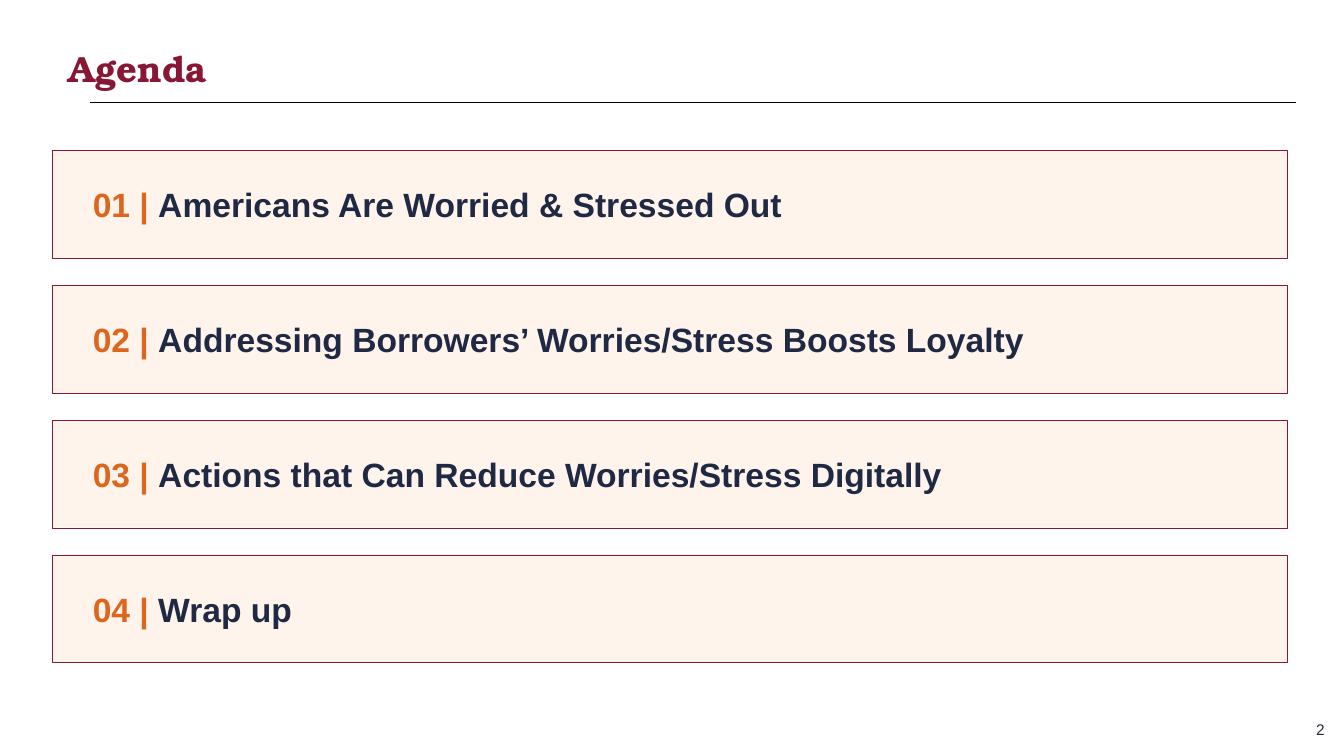
from lxml.etree import SubElement
from pptx import Presentation
from pptx.dml.color import RGBColor
from pptx.enum.shapes import MSO_CONNECTOR as Connector, MSO_SHAPE as Shape
from pptx.enum.text import MSO_ANCHOR as Anchor, PP_ALIGN as Align
from pptx.oxml.ns import qn
from pptx.util import Cm, Pt

TITLE = "Agenda"
TOPICS = [
    "Americans Are Worried & Stressed Out",
    "Addressing Borrowers’ Worries/Stress Boosts Loyalty",
    "Actions that Can Reduce Worries/Stress Digitally",
    "Wrap up",
]
PAGE_NUMBER = "2"

MAROON, ORANGE, NAVY = "881635", "DC661D", "202944"
CREAM, BLACK, CHARCOAL = "FEF0E5", "000000", "292934"
CREAM_OPACITY = 70

BAR_LEFT, BAR_TOP, BAR_WIDTH, BAR_HEIGHT = 1.32, 3.78, 31.12, 2.72
BAR_PITCH = 3.4
RULE_LEFT, RULE_RIGHT, RULE_TOP = 2.27, 32.67, 2.57


def color(target, value):
    target.rgb = RGBColor.from_string(value)


def write(paragraph, parts, font, size, bold):
    for text, value in parts:
        run = paragraph.add_run()
        run.text = text
        run.font.name, run.font.size, run.font.bold = font, Pt(size), bold
        color(run.font.color, value)


def add_label(slide, box, text, font, size, value, bold, wrap):
    frame = slide.shapes.add_textbox(*map(Cm, box)).text_frame
    frame.word_wrap = wrap
    frame.vertical_anchor = Anchor.MIDDLE if wrap else Anchor.TOP
    write(frame.paragraphs[0], [(text, value)], font, size, bold)


def add_topic(slide, index, topic):
    top = BAR_TOP + index * BAR_PITCH
    bar = slide.shapes.add_shape(
        Shape.RECTANGLE, Cm(BAR_LEFT), Cm(top), Cm(BAR_WIDTH), Cm(BAR_HEIGHT))
    bar.shadow.inherit = False
    bar.fill.solid()
    color(bar.fill.fore_color, CREAM)
    cream = bar._element.spPr.find(qn("a:solidFill")).find(qn("a:srgbClr"))
    SubElement(cream, qn("a:alpha"), val=str(CREAM_OPACITY * 1000))
    color(bar.line.color, MAROON)
    bar.line.width = Pt(0.25)
    frame = bar.text_frame
    frame.word_wrap = True
    frame.vertical_anchor = Anchor.MIDDLE
    frame.margin_left = Cm(1.02)
    paragraph = frame.paragraphs[0]
    paragraph.alignment = Align.LEFT
    parts = [(f"{index + 1:02} | ", ORANGE), (topic, NAVY)]
    write(paragraph, parts, "Arial", 24, True)


def add_rule(slide):
    rule = slide.shapes.add_connector(
        Connector.STRAIGHT, Cm(RULE_LEFT), Cm(RULE_TOP), Cm(RULE_RIGHT), Cm(RULE_TOP))
    color(rule.line.color, BLACK)
    rule.line.width = Pt(0.5)
    SubElement(rule._element.spPr, qn("a:effectLst"))


def main():
    """Build the agenda slide."""
    deck = Presentation()
    deck.slide_width, deck.slide_height = Cm(33.87), Cm(19.05)
    slide = deck.slides.add_slide(deck.slide_layouts[6])
    add_label(slide, (1.47, 1.04, 25.12, 1.37), TITLE, "TeX Gyre Bonum", 26, MAROON, True, True)
    add_rule(slide)
    for index, topic in enumerate(TOPICS):
        add_topic(slide, index, topic)
    add_label(slide, (32.92, 18.01, 0.74, 0.74), PAGE_NUMBER, "Arial", 11, CHARCOAL, False, False)
    deck.save("out.pptx")


if __name__ == "__main__":
    main()
